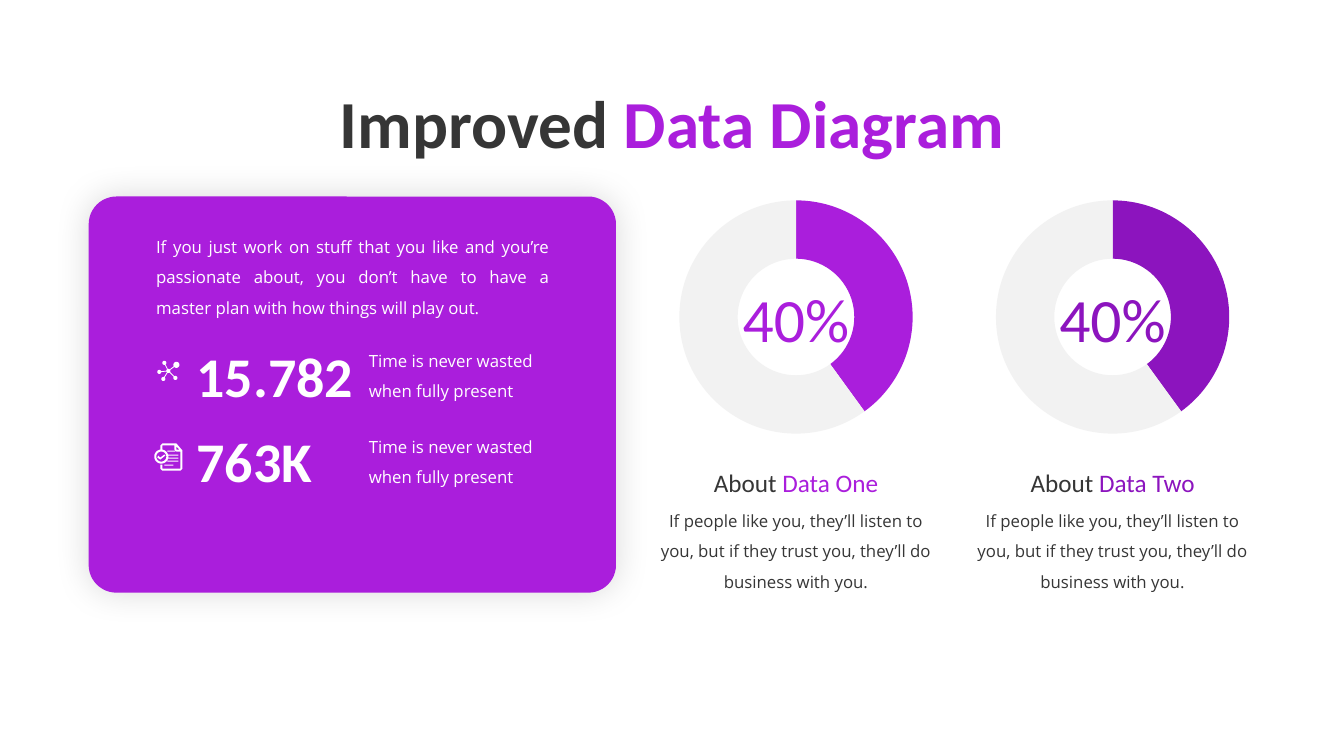
from math import atan2, cos, hypot, pi, sin

from pptx import Presentation
from pptx.chart.data import CategoryChartData as ChartData
from pptx.dml.color import RGBColor
from pptx.enum.chart import XL_CHART_TYPE as ChartType
from pptx.enum.shapes import MSO_SHAPE as Shape
from pptx.enum.text import MSO_ANCHOR as Anchor, MSO_AUTO_SIZE as AutoSize, PP_ALIGN as Align
from pptx.oxml import parse_xml
from pptx.oxml.ns import qn
from pptx.util import Inches, Pt

PURPLE = RGBColor(0xAA, 0x1E, 0xDC)
VIOLET = RGBColor(0x8C, 0x14, 0xBE)
DARK = RGBColor(0x36, 0x36, 0x36)
PALE = RGBColor(0xF2, 0xF2, 0xF2)
WHITE = RGBColor(0xFF, 0xFF, 0xFF)
DRAWING = 'xmlns:a="http://schemas.openxmlformats.org/drawingml/2006/main"'
SHADOW = (f'<a:effectLst {DRAWING}><a:outerShdw blurRad="317500" dist="0" algn="ctr">'
          '<a:srgbClr val="000000"><a:alpha val="15000"/></a:srgbClr></a:outerShdw></a:effectLst>')

TITLE = [("Improved ", DARK), ("Data Diagram", PURPLE)]
INTRO = ("If you just work on stuff that you like and you’re passionate about, "
         "you don’t have to have a master plan with how things will play out.")
FACTS = [("15.782", "Time is never wasted when fully present"),
         ("763K", "Time is never wasted when fully present")]
ABOUT = "If people like you, they’ll listen to you, but if they trust you, they’ll do business with you."
DONUTS = [("Data One", 40, PURPLE), ("Data Two", 40, VIOLET)]
FACT_TOP, FACT_STEP = 3.34, 0.84
NOTE_TOP, NOTE_STEP = 3.33, 0.85
DONUT_LEFT, DONUT_STEP = 6.46, 3.14

HUB, HUB_RADIUS, SPOKE_HALF = (1.67, 3.68), 0.02, 0.004
NODES = [(1.75, 3.62, 0.03), (1.74, 3.75, 0.02), (1.62, 3.76, 0.02),
         (1.58, 3.69, 0.02), (1.63, 3.6, 0.02)]
SHEET = [(1.59, 4.46), (1.59, 4.42), (1.61, 4.4), (1.75, 4.4), (1.81, 4.47), (1.81, 4.65),
         (1.79, 4.67), (1.61, 4.67), (1.59, 4.65), (1.59, 4.61), (1.61, 4.61), (1.61, 4.65),
         (1.79, 4.65), (1.79, 4.48), (1.75, 4.48), (1.73, 4.46), (1.73, 4.42), (1.61, 4.42),
         (1.61, 4.46)]
FOLD = [(1.78, 4.46), (1.75, 4.43), (1.75, 4.46)]
CHECK = [(1.64, 4.52), (1.59, 4.56), (1.56, 4.54), (1.57, 4.52), (1.59, 4.54), (1.63, 4.51)]
BADGE, BADGE_RADII = (1.6, 4.53), (0.07, 0.05)
TEXT_LINES = [(1.66, 1.74, 4.47), (1.67, 1.77, 4.51), (1.67, 1.77, 4.54),
              (1.66, 1.77, 4.57), (1.63, 1.72, 4.61)]


def write(box, spans, size, font="Calibri", bold=False, align=Align.LEFT,
          spacing=None, anchor=Anchor.TOP):
    """Fill a text shape with one paragraph of coloured spans."""
    frame = box.text_frame
    for name, value in {"word_wrap": True, "vertical_anchor": anchor,
                        "auto_size": AutoSize.SHAPE_TO_FIT_TEXT}.items():
        setattr(frame, name, value)
    para = frame.paragraphs[0]
    para.alignment = align
    if spacing:
        para.line_spacing = spacing
    for text, color in spans:
        span = para.add_run()
        span.text = text
        for name, value in {"size": Pt(size), "name": font, "bold": bold}.items():
            setattr(span.font, name, value)
        span.font.color.rgb = color


def add_text(page, place, spans, size, **style):
    """Add a text box at a place given in inches."""
    write(page.shapes.add_textbox(*map(Inches, place)), spans, size, **style)


def add_body(page, place, text, color, align=Align.LEFT):
    """Add a block of small text with wide line spacing."""
    add_text(page, place, [(text, color)], 12, font="Open Sans", align=align, spacing=1.5)


def paint(shape, color):
    """Give a shape a plain fill and no line."""
    shape.fill.solid()
    shape.fill.fore_color.rgb = color
    shape.line.fill.background()


def add_panel(page):
    """Add the rounded purple panel with its soft shadow."""
    panel = page.shapes.add_shape(Shape.ROUNDED_RECTANGLE, *map(Inches, (0.88, 1.95, 5.23, 3.93)))
    panel.adjustments[0] = 0.07
    paint(panel, PURPLE)
    panel._element.spPr.append(parse_xml(SHADOW))


def arc(center, radius, start, sweep, steps=24):
    """Return points along an arc."""
    angles = [start + sweep * step / steps for step in range(steps + 1)]
    return [(center[0] + radius * cos(angle), center[1] + radius * sin(angle)) for angle in angles]


def add_icon(page, contours):
    """Add one white outline made of closed contours."""
    builder = None
    for contour in contours:
        corners = [(Inches(x), Inches(y)) for x, y in contour]
        if builder is None:
            builder = page.shapes.build_freeform(*corners[0])
        else:
            builder.move_to(*corners[0])
        builder.add_line_segments(corners[1:], close=True)
    icon = builder.convert_to_shape()
    icon.shadow.inherit = False
    paint(icon, WHITE)


def network():
    """Return the contour around the hub, its spokes and their nodes."""
    spokes = sorted((atan2(y - HUB[1], x - HUB[0]), x, y, radius) for x, y, radius in NODES)
    hub_gap = SPOKE_HALF / HUB_RADIUS
    contour = []
    for index, (angle, x, y, radius) in enumerate(spokes):
        gap = SPOKE_HALF / radius
        contour += arc((x, y), radius, angle + pi + gap, 2 * pi - 2 * gap)
        following = spokes[(index + 1) % len(spokes)][0]
        sweep = (following - angle) % (2 * pi) - 2 * hub_gap
        contour += arc(HUB, HUB_RADIUS, angle + hub_gap, sweep, 8)
    return [contour]


def document():
    """Return the contours of the checked document."""
    rings = [arc(BADGE, radius, 0, 2 * pi) for radius in BADGE_RADII]
    rings[1].reverse()
    bars = [[(left, y), (right, y), (right, y + 0.01), (left, y + 0.01)]
            for left, right, y in TEXT_LINES]
    return [SHEET, FOLD[::-1], *rings, CHECK, *bars]


def add_donut(page, left, name, percent, color):
    """Add a doughnut chart with its percentage, heading and text."""
    data = ChartData()
    data.categories = ["1", "2"]
    data.add_series("Series 1", (percent, 100 - percent))
    chart = page.shapes.add_chart(
        ChartType.DOUGHNUT, *map(Inches, (left, 1.85, 2.87, 2.59)), data).chart
    chart.has_legend = chart.has_title = False
    for attribute, value in {"size": Pt(10), "name": "Open Sans"}.items():
        setattr(chart.font, attribute, value)
    chart.font.color.rgb = DARK
    plot = chart.plots[0]
    plot.vary_by_categories = True
    plot.has_data_labels = False
    plot._element.find(qn("c:holeSize")).set("val", "75")
    for index, shade in enumerate((color, PALE)):
        paint(plot.series[0].points[index].format, shade)
    add_text(page, (left + 0.77, 2.73, 1.33, 0.84), [(f"{percent}%", color)], 44,
             align=Align.CENTER, anchor=Anchor.MIDDLE)
    add_text(page, (left + 0.08, 4.59, 2.71, 0.4), [("About ", DARK), (name, color)], 18,
             align=Align.CENTER)
    add_body(page, (left - 0.02, 4.92, 2.91, 0.97), ABOUT, DARK, Align.CENTER)


def main():
    """Build the slide and save it."""
    deck = Presentation()
    deck.slide_width, deck.slide_height = Inches(13.33), Inches(7.5)
    page = deck.slides.add_slide(deck.slide_layouts[5])
    title = page.shapes.title
    for name, value in {"left": 1.77, "top": 0.76, "width": 9.79, "height": 0.91}.items():
        setattr(title, name, Inches(value))
    write(title, TITLE, 48, bold=True, align=Align.CENTER)
    add_panel(page)
    for index, donut in enumerate(DONUTS):
        add_donut(page, DONUT_LEFT + index * DONUT_STEP, *donut)
    add_body(page, (1.45, 2.2, 4.1, 1.01), INTRO, WHITE, Align.JUSTIFY)
    for index, (figure, note) in enumerate(FACTS):
        add_text(page, (1.85, FACT_TOP + index * FACT_STEP, 1.76, 0.77), [(figure, WHITE)], 40,
                 bold=True)
        add_body(page, (3.56, NOTE_TOP + index * NOTE_STEP, 1.99, 0.71), note, WHITE)
    for contours in (network(), document()):
        add_icon(page, contours)
    deck.save("out.pptx")


if __name__ == "__main__":
    main()
